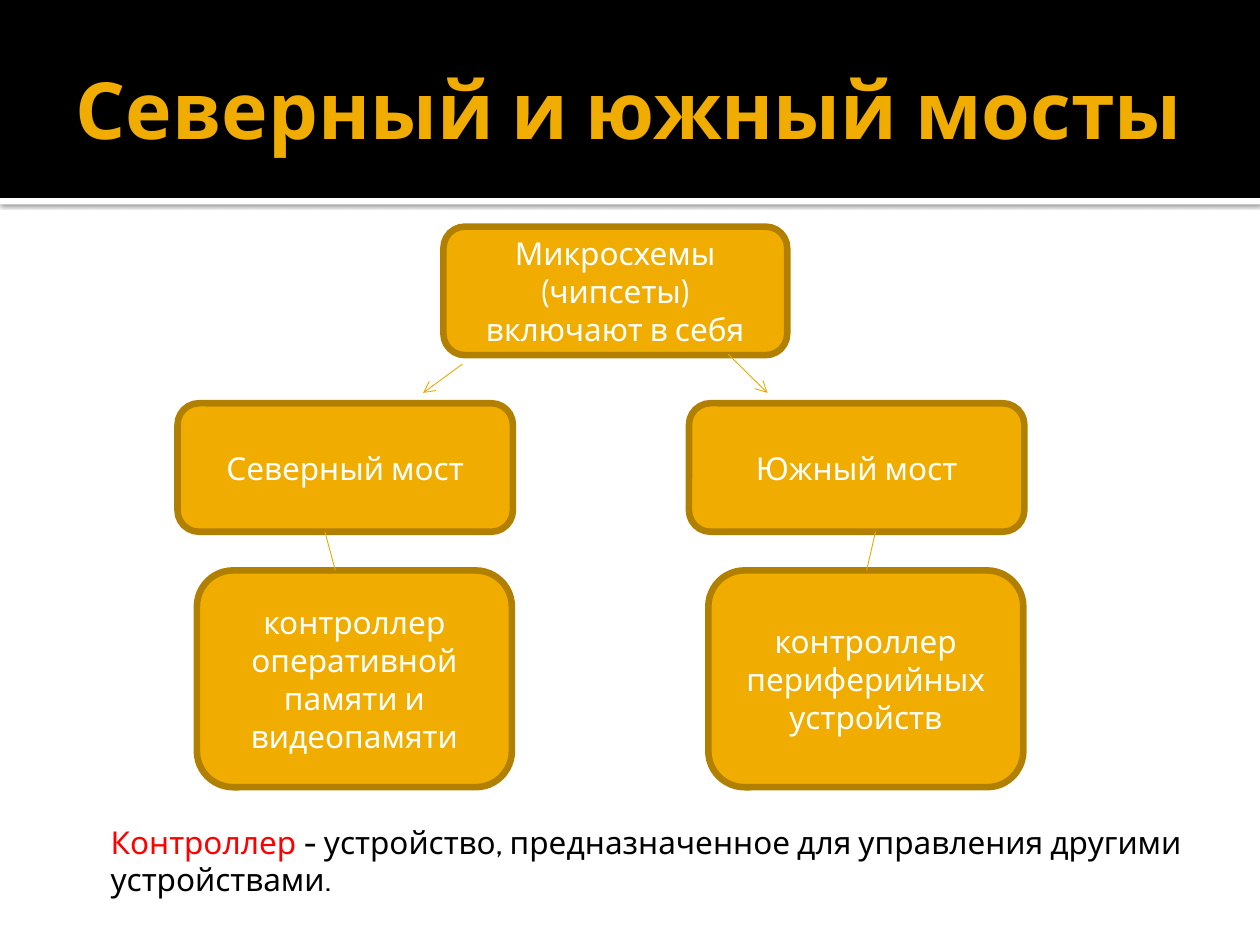
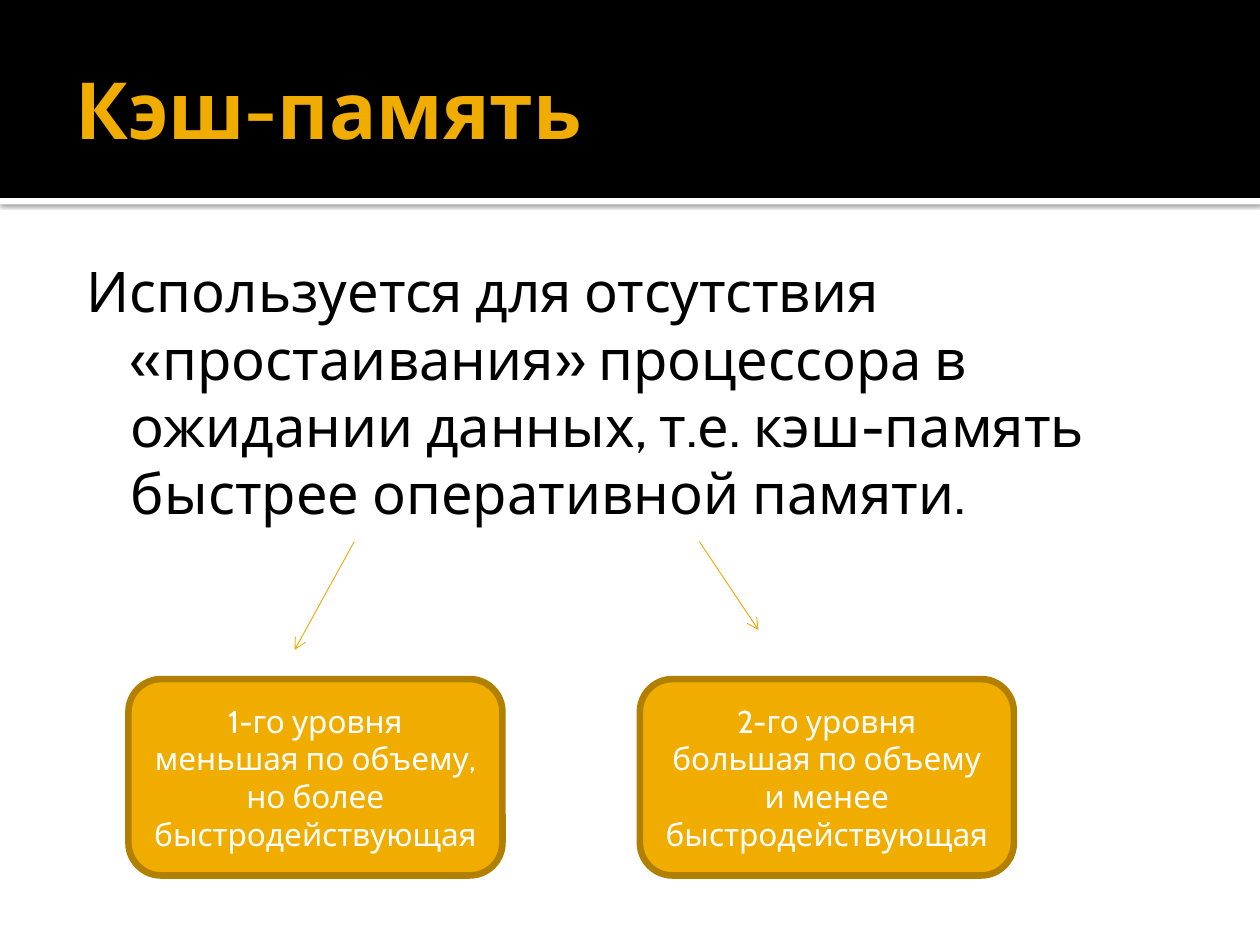
import pptx
import pptx.dml.color
import pptx.enum.shapes
import pptx.enum.text
import pptx.oxml
import pptx.oxml.ns
import pptx.util
from lxml import etree

Cm = pptx.util.Cm
Pt = pptx.util.Pt
RGB = pptx.dml.color.RGBColor
Shape = pptx.enum.shapes.MSO_SHAPE
Align = pptx.enum.text.PP_ALIGN
Anchor = pptx.enum.text.MSO_ANCHOR
Fit = pptx.enum.text.MSO_AUTO_SIZE
qn = pptx.oxml.ns.qn

GOLD = RGB(0xF0, 0xAD, 0x00)
BROWN = RGB(0xB2, 0x80, 0x00)
AMBER = RGB(0xEB, 0xA9, 0x00)
BLACK = RGB(0, 0, 0)
WHITE = RGB(0xFF, 0xFF, 0xFF)
RED = RGB(0xFF, 0, 0)
FONT = "Cabin"
PITCH = 10.31  # step between the left and right columns, cm
WIDE, HIGH = 25.4, 19.05
SHADE = (
    '<a:outerShdw xmlns:a="http://schemas.openxmlformats.org/drawingml/2006/main"'
    ' blurRad="31750" dist="10160" dir="5400000" algn="t" rotWithShape="0">'
    '<a:srgbClr val="000000"><a:alpha val="60000"/></a:srgbClr></a:outerShdw>'
)


def write(frame, *paras, size=18, color=BLACK, bold=False, align=Align.LEFT,
          anchor=Anchor.TOP, inset=None, fit=Fit.NONE):
    """Fill a frame; a paragraph is a string or a list of (text, color)."""
    frame.word_wrap = True
    frame.auto_size = fit
    frame.vertical_anchor = anchor
    if inset:
        (frame.margin_left, frame.margin_top,
         frame.margin_right, frame.margin_bottom) = map(Cm, inset)
    for i, para in enumerate(paras):
        line = frame.add_paragraph() if i else frame.paragraphs[0]
        line.alignment = align
        line.space_before = Pt(0)
        for text, tint in [(para, color)] if isinstance(para, str) else para:
            run = line.add_run()
            run.text = text
            run.font.name = FONT
            run.font.size = Pt(size)
            run.font.bold = bold
            run.font.color.rgb = tint


def place(shape, x, y, w, h):
    shape.left, shape.top, shape.width, shape.height = map(Cm, (x, y, w, h))


def card(shapes, x, y, w, h, *paras):
    box = shapes.add_shape(Shape.ROUNDED_RECTANGLE, *map(Cm, (x, y, w, h)))
    box.shadow.inherit = False
    box.fill.solid()
    box.fill.fore_color.rgb = GOLD
    box.line.color.rgb = BROWN
    box.line.width = Pt(3.78)
    write(box.text_frame, *paras, color=WHITE, align=Align.CENTER,
          anchor=Anchor.MIDDLE)


def link(shapes, x1, y1, x2, y2, arrow=False):
    line = shapes.add_connector(pptx.enum.shapes.MSO_CONNECTOR.STRAIGHT,
                                *map(Cm, (x1, y1, x2, y2)))
    line.line.color.rgb = AMBER
    line.line.width = Pt(0.5)
    if arrow:
        tail = etree.SubElement(line.line._get_or_add_ln(), qn("a:tailEnd"))
        tail.set("type", "arrow")
    etree.SubElement(line.element.spPr, qn("a:effectLst"))


def bands(deck, slide):
    """Put the black header and its shaded white strip on the master."""
    tree = deck.slide_master.placeholders[0].element.getparent()
    for i, (y, h, color) in enumerate([(3.99, 0.13, WHITE), (0, 3.99, BLACK)]):
        bar = slide.shapes.add_shape(Shape.RECTANGLE,
                                     *map(Cm, (0, y, WIDE, h)))
        bar.fill.solid()
        bar.fill.fore_color.rgb = color
        bar.line.fill.background()
        bar.shadow.inherit = False
        if color == WHITE:
            glow = bar.element.spPr.find(qn("a:effectLst"))
            glow.append(pptx.oxml.parse_xml(SHADE))
        bar.element.nvSpPr.cNvPr.set("id", str(20 + i))
        tree.insert(2 + i, bar.element)


def start(deck, kind, title):
    slide = deck.slides.add_slide(deck.slide_layouts.get_by_name(kind))
    head = slide.shapes.title
    place(head, 1.27, 0.43, 22.86, 3.48)
    write(head.text_frame, title, size=45, color=GOLD, bold=True,
          anchor=Anchor.MIDDLE, inset=(0.25, 0.13, 0.13, 0.13))
    return slide


def scheme(slide, x, y):
    """Draw the chipset tree from its top left corner."""
    shapes = slide.shapes.add_group_shape().shapes
    sides = [("Северный мост", "контроллер оперативной памяти и видеопамяти"),
             ("Южный мост", "контроллер периферийных устройств")]
    for i, (bridge, duty) in enumerate(sides):
        left = x + i * PITCH
        card(shapes, left, y + 3.56, 6.76, 2.59, bridge)
        card(shapes, left + 0.39, y + 6.93, 6.35, 4.37, duty)
    card(shapes, x + 5.36, y, 6.93, 2.59,
         "Микросхемы (чипсеты)", "включают в себя")
    link(shapes, x + 5.74, y + 2.77, x + 4.95, y + 3.35, arrow=True)
    link(shapes, x + 11.1, y + 2.57, x + 11.89, y + 3.35, arrow=True)
    for top, end in [(2.97, 3.18), (14.07, 13.89)]:
        link(shapes, x + top, y + 6.15, x + end, y + 6.93)


def define(slide, x, y, w, h):
    box = slide.shapes.add_textbox(*map(Cm, (x, y, w, h)))
    write(box.text_frame, [
        ("Контроллер", RED),
        (" - устройство, предназначенное для управления другими"
         " устройствами.", BLACK)], fit=Fit.SHAPE_TO_FIT_TEXT)


def prose(slide, x, y, w, h):
    body = slide.placeholders[1]
    place(body, x, y, w, h)
    write(body.text_frame,
          "Используется для отсутствия «простаивания» процессора в ожидании"
          " данных, т.е. кэш-память быстрее оперативной памяти.",
          size=32, inset=(0.15, 0.25, 0.25, 0.13))
    props = body.text_frame.paragraphs[0]._p.get_or_add_pPr()
    props.set("marL", str(Cm(1.22)))
    props.set("indent", str(Cm(-0.89)))
    etree.SubElement(props, qn("a:buNone"))


def levels(slide, x, y):
    """Draw the two cache levels and the arrows that lead to them."""
    shapes = slide.shapes
    link(shapes, x + 4.55, y, x + 3.35, y + 2.18, arrow=True)
    link(shapes, x + 11.51, y, x + 12.7, y + 1.78, arrow=True)
    notes = [("1-го уровня", "меньшая по объему, но более быстродействующая"),
             ("2-го уровня", "большая по объему и менее быстродействующая")]
    for i, note in enumerate(notes):
        card(shapes, x + i * PITCH, y + 2.77, 7.54, 3.96, *note)


def main():
    deck = pptx.Presentation()
    deck.slide_width, deck.slide_height = Cm(WIDE), Cm(HIGH)

    slide = start(deck, "Title Only", "Северный и южный мосты")
    bands(deck, slide)
    scheme(slide, 3.58, 4.57)
    define(slide, 1.98, 16.46, 22.23, 1.8)

    slide = start(deck, "Title and Content", "Кэш-память")
    prose(slide, 1.27, 4.93, 22.86, 12.85)
    levels(slide, 2.59, 10.92)

    deck.save("out.pptx")


if __name__ == "__main__":
    main()
